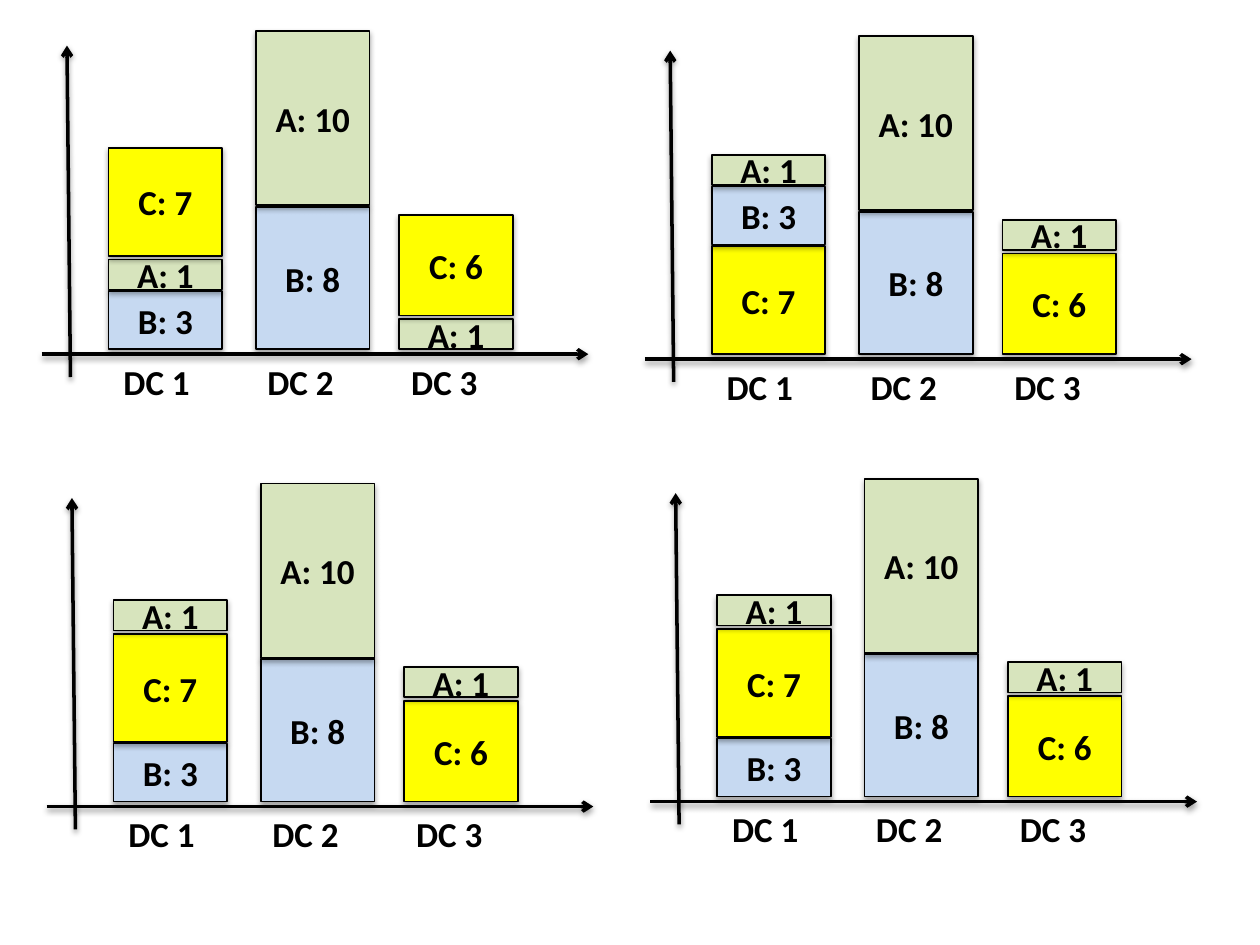
from dataclasses import dataclass

from lxml.etree import SubElement
from pptx import Presentation
from pptx.dml.color import RGBColor
from pptx.enum.shapes import MSO_CONNECTOR, MSO_SHAPE
from pptx.enum.text import MSO_ANCHOR, PP_ALIGN
from pptx.oxml.ns import qn
from pptx.util import Cm, Pt


@dataclass(frozen=True)
class Theme:
    font: str = "Calibri"
    size: int = 20
    ink: str = "000000"
    a: str = "D7E4BD"
    b: str = "C6D9F1"
    c: str = "FFFF00"
    axis_width: float = 2
    outline_width: float = 1


@dataclass(frozen=True)
class Box:
    left: float
    top: float
    width: float = 11.02
    height: float = 6.5


THEME = Theme()
FILLS = {"A": THEME.a, "B": THEME.b, "C": THEME.c}

# Lengths in centimetres, measured from the chart's box
BAR_LEFTS = (1.35, 4.32, 7.21)
BAR_WIDTH = 2.29
BAR_HEIGHTS = {"A: 1": 0.61, "A: 10": 3.51, "B: 3": 1.17,
               "B: 8": 2.87, "C: 6": 2.03, "C: 7": 2.18}
LABEL_LEFT, LABEL_STEP = 1.4, 2.9
LABEL_WIDTH, LABEL_HEIGHT = 2.36, 1.1
AXIS_GAP = 0.1
SEGMENT_GAP, WIDE_GAP = 0.03, 0.07

# Each stack is listed from the axis upwards
TALL_STACK = ("B: 8", "A: 10")
CHARTS = (
    (Box(0.84, 0.64), (("B: 3", "A: 1", "C: 7"), TALL_STACK, ("A: 1", "C: 6"))),
    (Box(13.0, 0.74), (("C: 7", "B: 3", "A: 1"), TALL_STACK, ("C: 6", "A: 1"))),
    (Box(0.94, 9.76), (("B: 3", "C: 7", "A: 1"), TALL_STACK, ("C: 6", "A: 1"))),
    (Box(13.11, 9.66), (("B: 3", "C: 7", "A: 1"), TALL_STACK, ("C: 6", "A: 1"))),
)


def write_text(frame, text, *, align=PP_ALIGN.LEFT, anchor=MSO_ANCHOR.TOP,
               size=THEME.size, color=THEME.ink, bold=True):
    frame.word_wrap = True
    frame.vertical_anchor = anchor
    paragraph = frame.paragraphs[0]
    paragraph.alignment = align
    run = paragraph.add_run()
    run.text = text
    run.font.name = THEME.font
    run.font.size = Pt(size)
    run.font.bold = bold
    run.font.color.rgb = RGBColor.from_string(color)


def add_axis(slide, start, end):
    axis = slide.shapes.add_connector(
        MSO_CONNECTOR.STRAIGHT, *(Cm(value) for value in (*start, *end)))
    axis.line.color.rgb = RGBColor.from_string(THEME.ink)
    axis.line.width = Pt(THEME.axis_width)
    SubElement(axis.line._get_or_add_ln(), qn("a:tailEnd"), type="arrow")


def add_segment(slide, text, left, top):
    # The soft shadow comes from the theme's effect style
    segment = slide.shapes.add_shape(
        MSO_SHAPE.RECTANGLE, Cm(left), Cm(top), Cm(BAR_WIDTH), Cm(BAR_HEIGHTS[text]))
    segment.fill.solid()
    segment.fill.fore_color.rgb = RGBColor.from_string(FILLS[text[0]])
    segment.line.color.rgb = RGBColor.from_string(THEME.ink)
    segment.line.width = Pt(THEME.outline_width)
    write_text(segment.text_frame, text, align=PP_ALIGN.CENTER,
               anchor=MSO_ANCHOR.MIDDLE)


def add_stack(slide, segments, left, bottom):
    below = None
    for text in segments:
        if below:
            bottom -= WIDE_GAP if {below[0], text[0]} == {"A", "C"} else SEGMENT_GAP
        bottom -= BAR_HEIGHTS[text]
        add_segment(slide, text, left, bottom)
        below = text


def add_stacked_chart(slide, box, stacks):
    base = box.top + box.height

    # Axes
    add_axis(slide, (box.left + 0.58, base + 0.46), (box.left + 0.51, base - 6.22))
    add_axis(slide, (box.left, base), (box.left + box.width, base))

    # Stacks
    for offset, segments in zip(BAR_LEFTS, stacks):
        add_stack(slide, segments, box.left + offset, base - AXIS_GAP)

    # Data centre labels
    for index in range(len(stacks)):
        label = slide.shapes.add_textbox(
            Cm(box.left + LABEL_LEFT + index * LABEL_STEP), Cm(base),
            Cm(LABEL_WIDTH), Cm(LABEL_HEIGHT))
        write_text(label.text_frame, f"DC {index + 1}")


def main():
    presentation = Presentation()
    presentation.slide_width = Cm(25.4)
    presentation.slide_height = Cm(19.05)
    slide = presentation.slides.add_slide(presentation.slide_layouts[6])
    for box, stacks in CHARTS:
        add_stacked_chart(slide, box, stacks)
    presentation.save("out.pptx")


if __name__ == "__main__":
    main()
